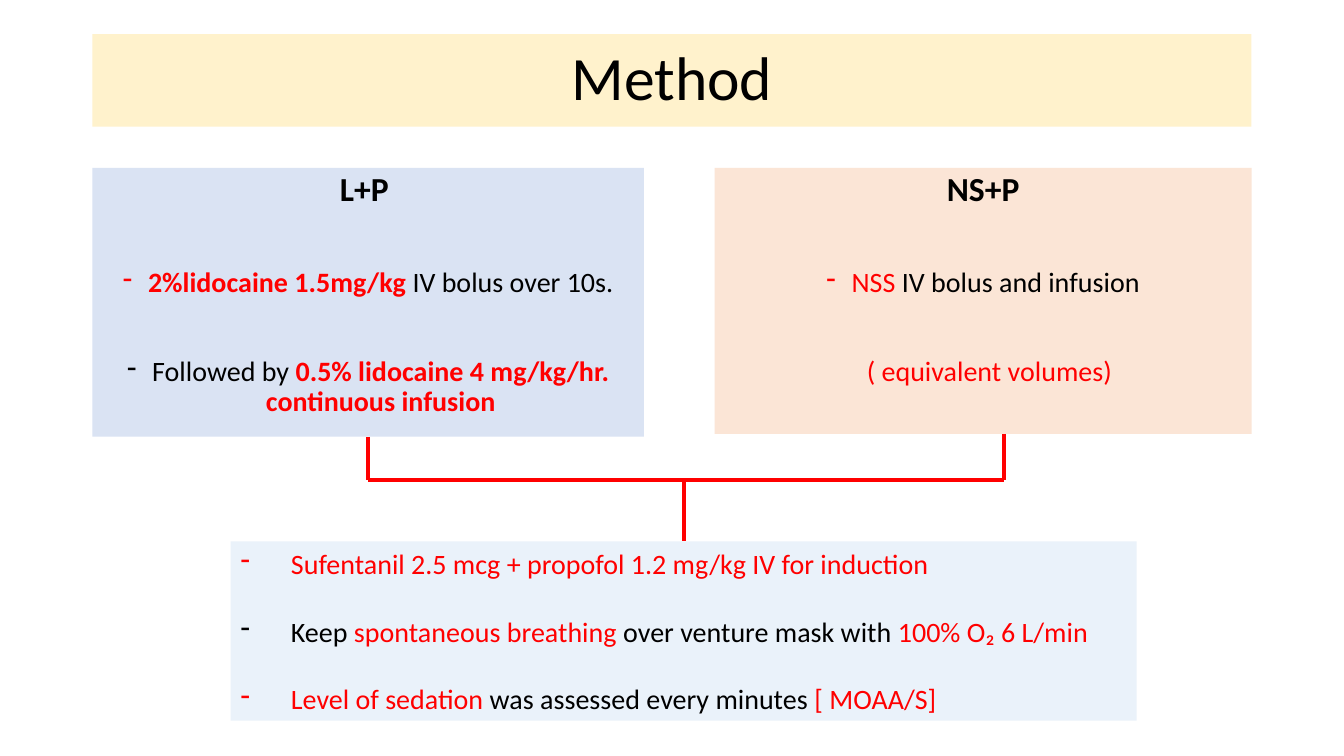
from lxml.etree import SubElement
from pptx import Presentation
from pptx.dml.color import RGBColor
from pptx.enum.shapes import MSO_CONNECTOR, MSO_SHAPE
from pptx.enum.text import MSO_ANCHOR, PP_ALIGN
from pptx.oxml.ns import qn
from pptx.util import Pt

BLACK = RGBColor(0, 0, 0)
RED = RGBColor(0xFF, 0, 0)
CREAM = RGBColor(0xFF, 0xF2, 0xCC)
BLUE = RGBColor(0xDA, 0xE3, 0xF3)
PEACH = RGBColor(0xFB, 0xE5, 0xD6)
PALE_BLUE = RGBColor(0xEA, 0xF2, 0xFA)

# Content: each paragraph is a list of (text, colour, bold) runs
TITLE = [("Method", BLACK, False)]
LIDOCAINE_HEAD = [("L+P ", BLACK, True)]
LIDOCAINE_STEPS = [
    [("2%lidocaine 1.5mg/kg ", RED, True), ("IV bolus over 10s.", BLACK, False)],
    [("Followed by ", BLACK, False),
     ("0.5% lidocaine 4 mg/kg/hr. continuous infusion", RED, True)],
]
SALINE_HEAD = [("NS+P", BLACK, True)]
SALINE_STEP = [("NSS", RED, False), (" IV bolus and infusion", BLACK, False)]
SALINE_NOTE = [("( equivalent volumes)", RED, False)]
INDUCTION_STEPS = [
    [("Sufentanil 2.5 mcg + propofol 1.2 mg/kg IV for induction", RED, False)],
    [("Keep ", BLACK, False), ("spontaneous breathing ", RED, False),
     ("over venture mask with ", BLACK, False), ("100% O₂ 6 L/min", RED, False)],
    [("Level of sedation ", RED, False),
     ("was assessed every minutes ", BLACK, False), ("[ MOAA/S]", RED, False)],
]

# Layout in points: left, top, width, height
TITLE_BOX = (66, 24.5, 828, 66)
LIDOCAINE_BOX = (66, 120, 394, 192)
SALINE_BOX = (510.5, 120, 383.5, 190)
INDUCTION_BOX = (164.75, 386.75, 647.25, 128)
JOIN_Y = 342.75
GROUP_GAP = 42
STEP_GAP = 24.4


def add_box(slide, box, colour):
    shape = slide.shapes.add_shape(MSO_SHAPE.RECTANGLE, *map(Pt, box))
    shape.shadow.inherit = False
    shape.fill.solid()
    shape.fill.fore_color.rgb = colour
    shape.line.fill.background()
    shape.text_frame.word_wrap = True
    shape.text_frame.vertical_anchor = MSO_ANCHOR.TOP
    return shape.text_frame


def add_text(frame, runs, size=20, align=PP_ALIGN.CENTER, spacing=0.9,
             before=0, indent=0, bullet=False):
    paragraph = frame.paragraphs[0]
    if paragraph.runs:
        paragraph = frame.add_paragraph()
    paragraph.alignment = align
    paragraph.line_spacing = spacing
    paragraph.space_before = Pt(before)
    paragraph.font.size = Pt(size)
    paragraph.font.name = "Calibri"
    properties = paragraph._p.get_or_add_pPr()
    properties.set("marL", str(Pt(indent)))
    if bullet:
        properties.set("indent", str(-Pt(indent)))
        mark = SubElement(properties, qn("a:buChar"))
        mark.set("char", "-")
        properties.insert_element_before(mark, "a:tabLst", "a:defRPr", "a:extLst")
    for text, colour, bold in runs:
        run = paragraph.add_run()
        run.text = text
        run.font.size = Pt(size)
        run.font.name = "Calibri"
        run.font.color.rgb = colour
        run.font.bold = bold


def add_line(slide, *ends):
    line = slide.shapes.add_connector(MSO_CONNECTOR.STRAIGHT, *map(Pt, ends))
    line.line.color.rgb = RED
    line.line.width = Pt(3)
    SubElement(line._element.spPr, qn("a:effectLst"))


def main():
    presentation = Presentation()
    presentation.slide_width, presentation.slide_height = Pt(960), Pt(540)
    slide = presentation.slides.add_slide(presentation.slide_layouts[6])

    # Title
    frame = add_box(slide, TITLE_BOX, CREAM)
    frame.vertical_anchor = MSO_ANCHOR.MIDDLE
    add_text(frame, TITLE, size=44)

    # Two study groups
    frame = add_box(slide, LIDOCAINE_BOX, BLUE)
    add_text(frame, LIDOCAINE_HEAD, size=24, before=10)
    for step in LIDOCAINE_STEPS:
        add_text(frame, step, before=GROUP_GAP, indent=18, bullet=True)

    frame = add_box(slide, SALINE_BOX, PEACH)
    add_text(frame, SALINE_HEAD, size=24, before=10)
    add_text(frame, SALINE_STEP, before=GROUP_GAP, indent=18, bullet=True)
    add_text(frame, SALINE_NOTE, before=GROUP_GAP, indent=9)

    # Shared induction steps
    frame = add_box(slide, INDUCTION_BOX, PALE_BLUE)
    for index, step in enumerate(INDUCTION_STEPS):
        add_text(frame, step, align=PP_ALIGN.LEFT, spacing=1.0,
                 before=STEP_GAP if index else 0, indent=36, bullet=True)

    # Bracket joining both groups to the shared steps
    group_centres = []
    for left, top, width, height in (LIDOCAINE_BOX, SALINE_BOX):
        centre = left + width / 2
        if left == SALINE_BOX[0]:
            centre += 15
        group_centres.append(centre)
        add_line(slide, centre, top + height, centre, JOIN_Y)
    add_line(slide, group_centres[0], JOIN_Y, group_centres[1], JOIN_Y)
    stem_x = INDUCTION_BOX[0] + INDUCTION_BOX[2] / 2
    add_line(slide, stem_x, JOIN_Y, stem_x, INDUCTION_BOX[1])

    presentation.save("out.pptx")


if __name__ == "__main__":
    main()
